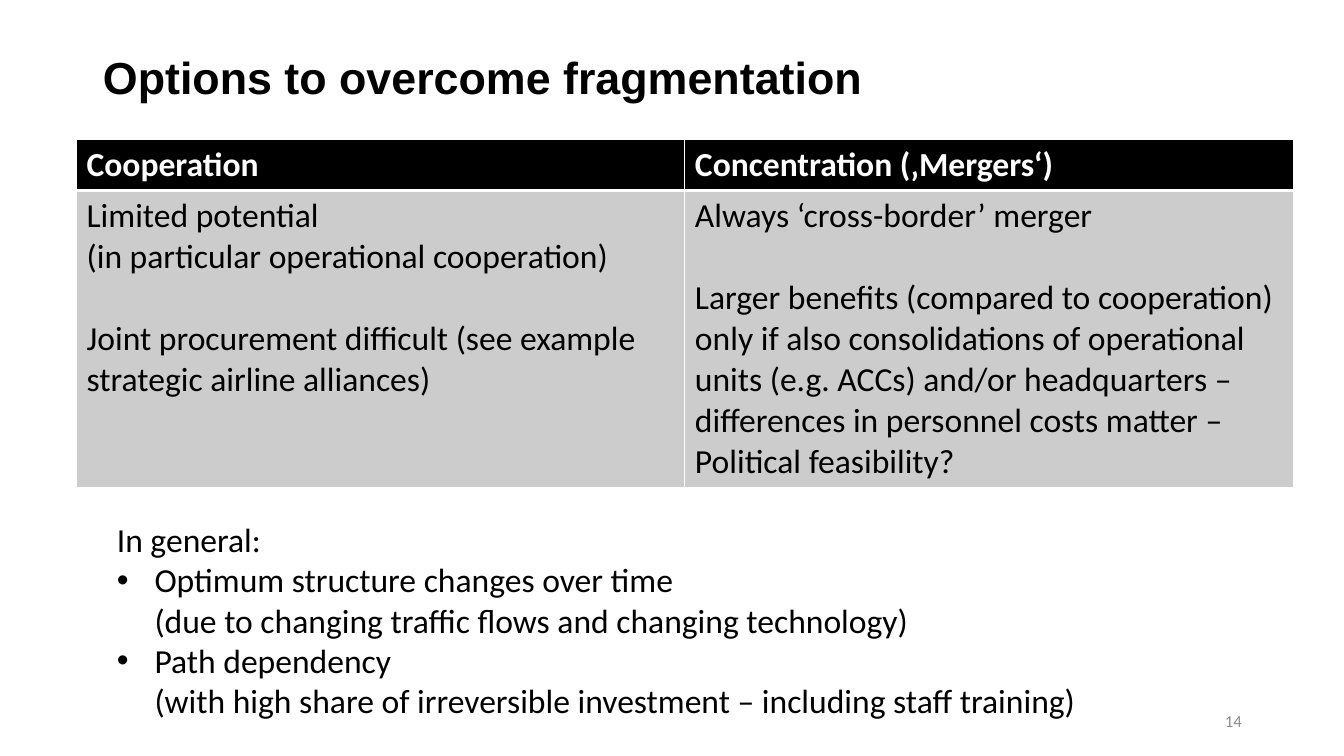
from dataclasses import dataclass

from lxml import etree
from pptx import Presentation
from pptx.dml.color import RGBColor
from pptx.enum.text import MSO_ANCHOR, MSO_AUTO_SIZE, PP_ALIGN
from pptx.oxml.ns import qn
from pptx.util import Cm, Pt

TOP, MIDDLE = MSO_ANCHOR.TOP, MSO_ANCHOR.MIDDLE
LEFT, RIGHT = PP_ALIGN.LEFT, PP_ALIGN.RIGHT
NO_FIT = MSO_AUTO_SIZE.NONE


@dataclass(frozen=True)
class Theme:
    black: str = "000000"
    white: str = "FFFFFF"
    cell: str = "CCCCCC"
    number: str = "8C8C8C"
    title_font: str = "Arial"
    body_font: str = "Calibri"
    title_size: int = 32
    body_size: int = 24
    number_size: int = 12


T = Theme()


def write(p, text, color=T.black, size=T.body_size, font=T.body_font, bold=False):
    """Fill a paragraph with runs, one per line of the text."""
    for i, line in enumerate(text.split("\n")):
        if i:
            p.add_line_break()
        r = p.add_run()
        r.text = line
        r.font.name, r.font.size, r.font.bold = font, Pt(size), bold
        r.font.color.rgb = RGBColor.from_string(color)


def add_borders(cell, bottom):
    """Give a cell white borders, 1 pt except for the bottom one."""
    tcPr = cell._tc.get_or_add_tcPr()
    widths = {"a:lnL": 1, "a:lnR": 1, "a:lnT": 1, "a:lnB": bottom}
    for i, (tag, width) in enumerate(widths.items()):
        ln = etree.Element(qn(tag), w=str(Pt(width)))
        fill = etree.SubElement(ln, qn("a:solidFill"))
        etree.SubElement(fill, qn("a:srgbClr"), val=T.white)
        tcPr.insert(i, ln)


prs = Presentation()
prs.slide_width, prs.slide_height = Cm(33.87), Cm(19.05)
s = prs.slides.add_slide(prs.slide_layouts[1])
title, body = s.placeholders

# Title
title.left, title.top, title.width, title.height = Cm(2.34), Cm(1.02), Cm(29.21), Cm(3.68)
tf = title.text_frame
tf.auto_size, tf.vertical_anchor, tf.margin_top = NO_FIT, TOP, Cm(0.38)
p = tf.paragraphs[0]
p.alignment, p.line_spacing = LEFT, 0.9
write(p, "Options to overcome fragmentation", size=T.title_size, font=T.title_font, bold=True)

# Comparison table
options = [
    [["Cooperation"], ["Concentration (‚Mergers‘)"]],
    [
        [
            "Limited potential\n(in particular operational cooperation)",
            "Joint procurement difficult (see example strategic airline alliances)",
        ],
        [
            "Always ‘cross-border’ merger",
            "Larger benefits (compared to cooperation) only if also consolidations of "
            "operational units (e.g. ACCs) and/or headquarters –\n"
            "differences in personnel costs matter –\nPolitical feasibility?",
        ],
    ],
]
row_styles = [(Cm(1.28), T.black, T.white, True, 3), (Cm(7.48), T.cell, T.black, False, 1)]
table = s.shapes.add_table(2, 2, Cm(1.93), Cm(3.51), Cm(30.66), Cm(8.76)).table
table.horz_banding = False
for row, texts, (height, fill, color, bold, bottom) in zip(table.rows, options, row_styles):
    row.height = height
    for cell, paragraphs in zip(row.cells, texts):
        cell.fill.solid()
        cell.fill.fore_color.rgb = RGBColor.from_string(fill)
        add_borders(cell, bottom)
        tf = cell.text_frame
        for i, text in enumerate(paragraphs):
            p = tf.add_paragraph() if i else tf.paragraphs[0]
            p.space_before = Pt(29.3 if i else 0)
            write(p, text, color, bold=bold)

# General remarks
remarks = [
    ("In general:", False),
    ("Optimum structure changes over time\n"
     "(due to changing traffic flows and changing technology)", True),
    ("Path dependency\n"
     "(with high share of irreversible investment – including staff training)", True),
]
body.left, body.top, body.width, body.height = Cm(2.69), Cm(12.95), Cm(29.34), Cm(5.38)
tf = body.text_frame
tf.auto_size, tf.vertical_anchor = NO_FIT, TOP
for i, (text, bulleted) in enumerate(remarks):
    p = tf.add_paragraph() if i else tf.paragraphs[0]
    p.space_before = Pt(0)
    indent = Cm(0.95) if bulleted else 0
    pPr = p._p.get_or_add_pPr()
    pPr.set("marL", str(indent))
    pPr.set("indent", str(-indent))
    if bulleted:
        etree.SubElement(pPr, qn("a:buFont"), typeface="Arial")
        etree.SubElement(pPr, qn("a:buChar"), char="•")
    else:
        etree.SubElement(pPr, qn("a:buNone"))
    write(p, text)

# Slide number
sp = s.shapes.add_textbox(Cm(23.93), Cm(17.65), Cm(7.62), Cm(1.02))
tf = sp.text_frame
tf.word_wrap, tf.vertical_anchor = True, MIDDLE
p = tf.paragraphs[0]
p.alignment = RIGHT
write(p, "14", T.number, T.number_size)

prs.save("out.pptx")
